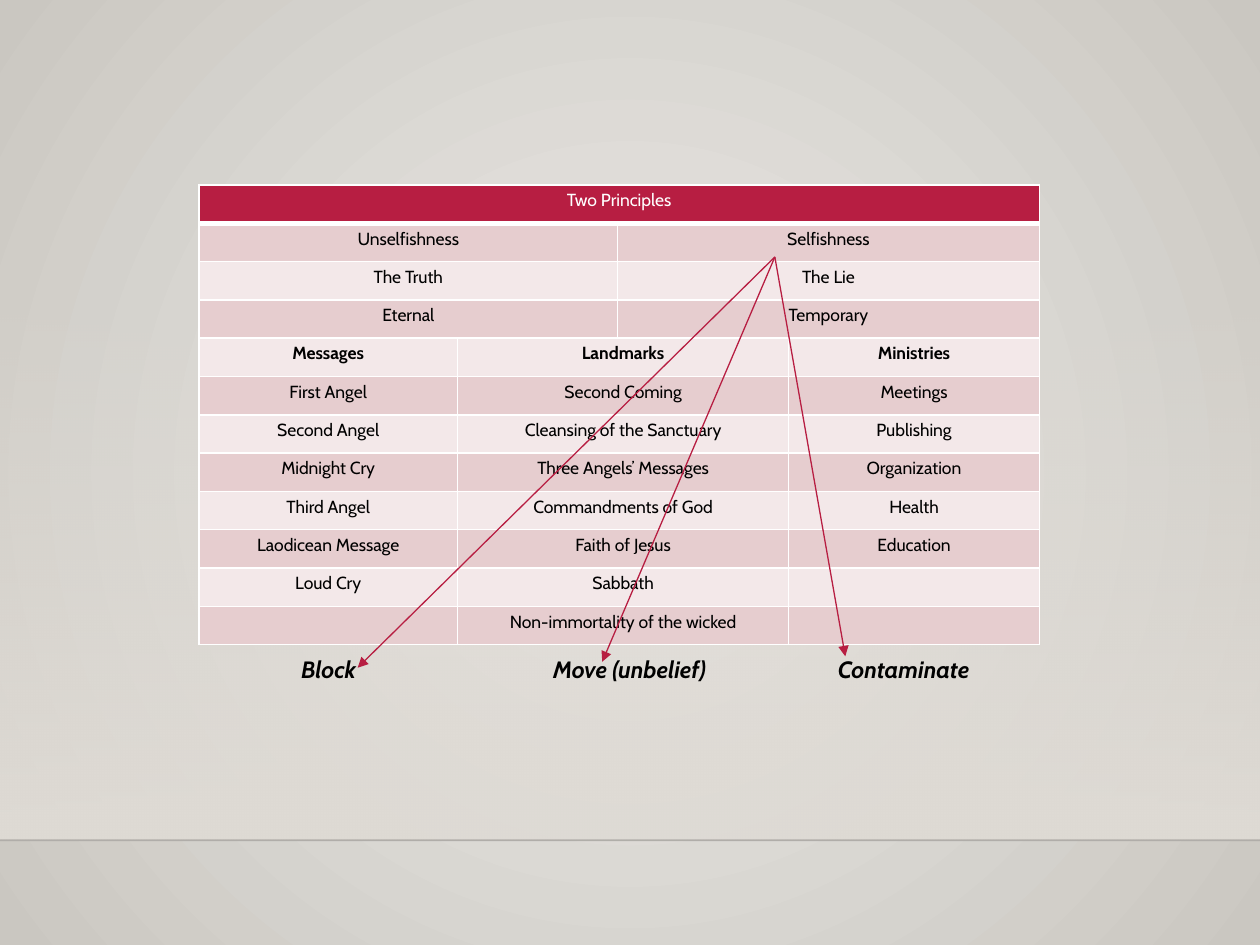
from lxml.etree import SubElement
from pptx import Presentation
from pptx.dml.color import RGBColor
from pptx.enum.shapes import MSO_CONNECTOR, MSO_SHAPE
from pptx.enum.text import MSO_AUTO_SIZE, PP_ALIGN
from pptx.oxml import parse_xml
from pptx.oxml.ns import nsdecls, qn
from pptx.util import Cm, Pt

RED = RGBColor(0xB7, 0x1E, 0x42)
ROSE = RGBColor(0xE6, 0xCD, 0xCF)
PALE = RGBColor(0xF3, 0xE8, 0xE9)
WHITE = RGBColor(0xFF, 0xFF, 0xFF)
BLACK = RGBColor(0, 0, 0)
INK = RGBColor(0, 0, 1)
LIGHT = RGBColor(0xEC, 0xEA, 0xE7)
STONE = RGBColor(0xCA, 0xC7, 0xC1)
SAND = RGBColor(0xDF, 0xDB, 0xD5)

WIDE, HIGH, FLOOR = 25.4, 19.05, 16.94
CELL = {"name": "Cabin", "size": Pt(10)}
LABEL = {"name": "Cabin", "size": Pt(13.5), "bold": True, "italic": True}
INSETS = {"margin_left": Cm(0.19), "margin_right": Cm(0.19),
          "margin_top": Cm(0.1), "margin_bottom": Cm(0.1)}

COLS = (5.21, 3.23, 3.45, 5.05)
TALL = 9.27
PAIRS = [("Unselfishness", "Selfishness"), ("The Truth", "The Lie"),
         ("Eternal", "Temporary")]
TRIOS = [
    ("Messages", "Landmarks", "Ministries"),
    ("First Angel", "Second Coming", "Meetings"),
    ("Second Angel", "Cleansing of the Sanctuary", "Publishing"),
    ("Midnight Cry", "Three Angels’ Messages", "Organization"),
    ("Third Angel", "Commandments of God", "Health"),
    ("Laodicean Message", "Faith of Jesus", "Education"),
    ("Loud Cry", "Sabbath", ""),
    ("", "Non-immortality of the wicked", ""),
]
ROWS = [("Two Principles",), *PAIRS, *TRIOS]
# First and last column of each cell, by the number of cells in the row
SPANS = {1: [(0, 3)], 2: [(0, 1), (2, 3)], 3: [(0, 0), (1, 2), (3, 3)]}

# Text, left and width of each label
LABELS = [("Block", 5.82, 2.06), ("Move (unbelief)", 10.9, 4.32),
          ("Contaminate", 16.64, 4.32)]
START = (15.62, 5.18)
TIPS = [(7.21, 13.46), (12.14, 13.34), (17.04, 13.23)]


def style(item, values):
    for key, value in values.items():
        setattr(item, key, value)


def fade(color, share):
    """Make a colour element opaque only by the given percentage."""
    SubElement(color, qn("a:alpha")).set("val", str(share * 1000))


def blend(fill, first, last):
    fill.gradient()
    for stop, color, place in zip(fill.gradient_stops, (first, last), (0, 1)):
        stop.color.rgb = color
        stop.position = place


def add_back(slide):
    blend(slide.background.fill, LIGHT, STONE)
    lin = slide.element.find(".//" + qn("a:lin"))
    lin.getparent().replace(lin, parse_xml(
        f'<a:path {nsdecls("a")} path="circle">'
        '<a:fillToRect l="50000" t="50000" r="50000" b="50000"/></a:path>'))
    top = 5.59
    veil = slide.shapes.add_shape(
        MSO_SHAPE.RECTANGLE, 0, Cm(top), Cm(WIDE), Cm(FLOOR - top))
    veil.shadow.inherit = False
    veil.line.fill.background()
    blend(veil.fill, SAND, SAND)
    veil.fill.gradient_angle = 270
    fade(veil.element.spPr.find(".//" + qn("a:srgbClr")), 0)
    edge = add_line(slide, (0, FLOOR), (WIDE, FLOOR), INK, 1)
    fade(edge.element.spPr.find(".//" + qn("a:srgbClr")), 20)


def add_line(slide, start, end, color, width):
    line = slide.shapes.add_connector(
        MSO_CONNECTOR.STRAIGHT, *map(Cm, start + end))
    line.line.color.rgb = color
    line.line.width = Pt(width)
    SubElement(line.element.spPr, qn("a:effectLst"))
    return line


def add_arrow(slide, start, end):
    line = add_line(slide, start, end, RED, 0.75)
    ln = line.element.spPr.find(qn("a:ln"))
    SubElement(ln, qn("a:tailEnd")).set("type", "triangle")


def add_label(slide, text, left, width):
    box = slide.shapes.add_textbox(Cm(left), Cm(13.08), Cm(width), Cm(0.84))
    frame = box.text_frame
    style(frame, {"word_wrap": True, "auto_size": MSO_AUTO_SIZE.SHAPE_TO_FIT_TEXT})
    run = frame.paragraphs[0].add_run()
    run.text = text
    style(run.font, LABEL)
    run.font.color.rgb = BLACK


def paint(cell, color, head):
    """Give a cell its insets, white borders and fill."""
    style(cell, INSETS)
    props = cell._tc.get_or_add_tcPr()
    for side in "LRTB":
        width = Pt(3 if head and side == "B" else 1)
        props.append(parse_xml(
            f'<a:ln{side} {nsdecls("a")} w="{width}"><a:solidFill>'
            f'<a:srgbClr val="{WHITE}"/></a:solidFill></a:ln{side}>'))
    cell.fill.solid()
    cell.fill.fore_color.rgb = color


def write(cell, text, color, bold):
    para = cell.text_frame.paragraphs[0]
    para.alignment = PP_ALIGN.CENTER
    if not text:
        # Keeps an empty row part as low as the others
        SubElement(para._p, qn("a:endParaRPr")).set("sz", "1000")
        return
    run = para.add_run()
    run.text = text
    style(run.font, {**CELL, "bold": bold})
    run.font.color.rgb = color


def add_grid(slide):
    grid = slide.shapes.add_table(
        len(ROWS), len(COLS), Cm(4.01), Cm(3.73), Cm(sum(COLS)), Cm(TALL)).table
    for col, width in zip(grid.columns, COLS):
        col.width = Cm(width)
    for r, texts in enumerate(ROWS):
        grid.rows[r].height = Cm(TALL / len(ROWS))
        head = r == 0
        fill = RED if head else ROSE if r % 2 else PALE
        for c in range(len(COLS)):
            paint(grid.cell(r, c), fill, head)
        for text, (first, last) in zip(texts, SPANS[len(texts)]):
            cell = grid.cell(r, first)
            if last > first:
                cell.merge(grid.cell(r, last))
            write(cell, text, WHITE if head else BLACK, texts == TRIOS[0])


def main():
    deck = Presentation()
    style(deck, {"slide_width": Cm(WIDE), "slide_height": Cm(HIGH)})
    slide = deck.slides.add_slide(deck.slide_layouts[6])
    add_back(slide)
    add_grid(slide)
    for label in LABELS:
        add_label(slide, *label)
    for tip in TIPS:
        add_arrow(slide, START, tip)
    deck.save("out.pptx")


if __name__ == "__main__":
    main()
